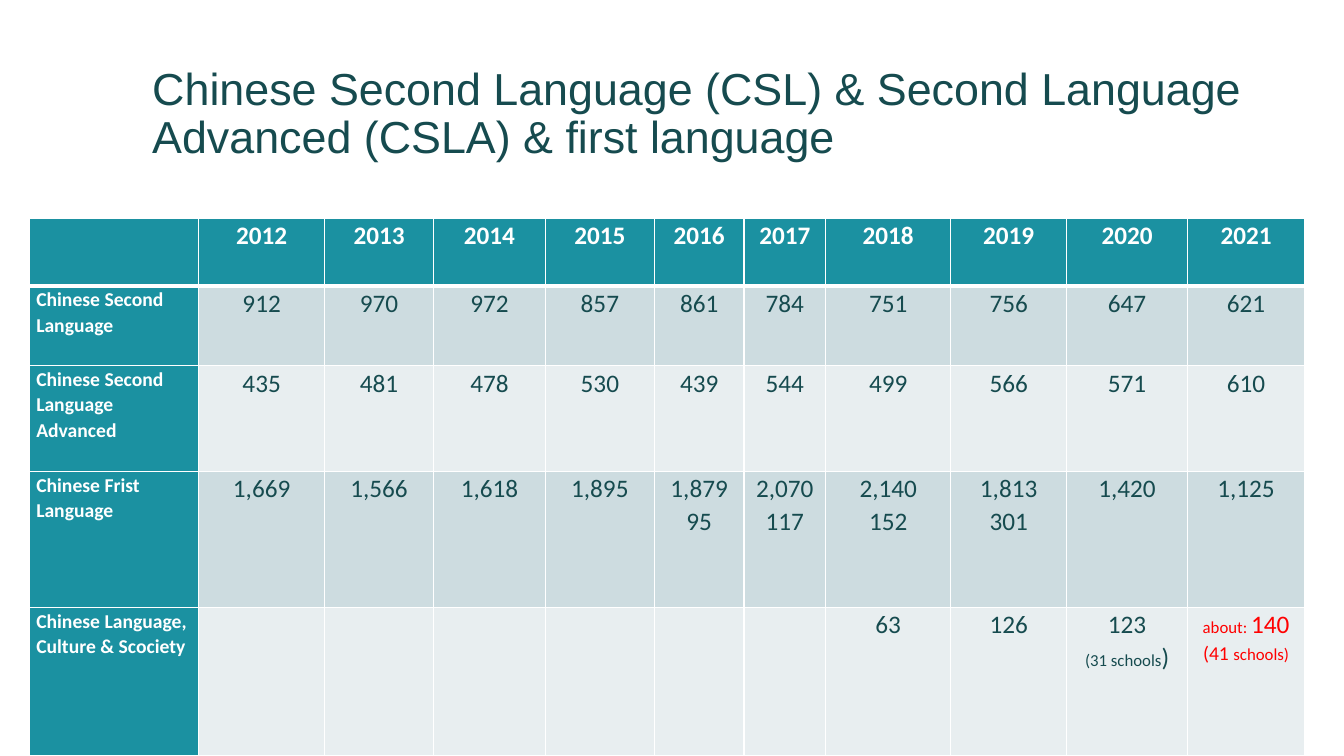
from dataclasses import dataclass

from lxml import etree
from pptx import Presentation
from pptx.dml.color import RGBColor
from pptx.enum.text import MSO_ANCHOR, MSO_AUTO_SIZE, PP_ALIGN
from pptx.oxml.ns import qn
from pptx.util import Inches, Pt

LEFT, CENTER = PP_ALIGN.LEFT, PP_ALIGN.CENTER
BOTTOM = MSO_ANCHOR.BOTTOM
NO_FIT = MSO_AUTO_SIZE.NONE
TITLE_ONLY = 5


@dataclass(frozen=True)
class Theme:
    head: str = "Arial"
    body: str = "Calibri"
    ink: str = "164B4F"
    teal: str = "1B91A1"
    dark: str = "CDDCE0"
    light: str = "E8EEF0"
    white: str = "FFFFFF"
    red: str = "FF0000"
    title: int = 32
    value: int = 18
    label: int = 14
    note: int = 12


THEME = Theme()


@dataclass(frozen=True)
class Part:
    text: str
    size: int


@dataclass(frozen=True)
class Entry:
    lines: tuple
    color: str = THEME.ink


@dataclass(frozen=True)
class Row:
    label: str
    height: float
    values: tuple


TITLE = "Chinese Second Language (CSL) & Second Language Advanced (CSLA) & first language"
WIDTHS = (1.68, 1.25, 1.08, 1.11, 1.08, 0.89, 0.81, 1.24, 1.15, 1.2, 1.16)
VALUE, LABEL, NOTE = THEME.value, THEME.label, THEME.note
SCHOOLS_20 = Entry((
    (Part("123", VALUE),),
    (Part("(31 schools", NOTE), Part(")", VALUE)),
))
SCHOOLS_21 = Entry((
    (Part("about: ", NOTE), Part("140", VALUE)),
    (Part("(41 ", LABEL), Part("schools)", NOTE)),
), THEME.red)
ROWS = (
    Row("", 0.67, tuple(str(year) for year in range(2012, 2022))),
    Row("Chinese Second Language", 0.79,
        ("912", "970", "972", "857", "861", "784", "751", "756", "647", "621")),
    Row("Chinese Second Language Advanced", 1.05,
        ("435", "481", "478", "530", "439", "544", "499", "566", "571", "610")),
    Row("Chinese Frist Language", 1.35,
        ("1,669", "1,566", "1,618", "1,895", "1,879\n95", "2,070\n117",
         "2,140\n152", "1,813\n301", "1,420", "1,125")),
    Row("Chinese Language, Culture & Scociety", 1.47,
        ("",) * 6 + ("63", "126", SCHOOLS_20, SCHOOLS_21)),
)


def write(frame, text, *, size: int, color: str, font: str = THEME.body,
          bold: bool = False, align=CENTER, space: float = 1.07) -> None:
    if isinstance(text, Entry):
        lines, color = text.lines, text.color
    else:
        lines = [(Part(line, size),) for line in text.split("\n")]
    for i, line in enumerate(lines):
        para = frame.add_paragraph() if i else frame.paragraphs[0]
        para.alignment, para.line_spacing = align, space
        para.font.size = Pt(size)
        for part in line:
            if not part.text:
                continue
            run = para.add_run()
            run.text = part.text
            run.font.name, run.font.size, run.font.bold = font, Pt(part.size), bold
            run.font.color.rgb = RGBColor.from_string(color)


def edge(cell, top: int, bottom: int) -> None:
    props = cell._tc.get_or_add_tcPr()
    for i, (side, width) in enumerate((("L", 1), ("R", 1), ("T", top), ("B", bottom))):
        line = etree.Element(qn(f"a:ln{side}"), w=str(Pt(width)))
        fill = etree.SubElement(line, qn("a:solidFill"))
        etree.SubElement(fill, qn("a:srgbClr"), val=THEME.white)
        props.insert(i, line)


def add_title(slide) -> None:
    title = slide.shapes.title
    title.left, title.top = Inches(1.41), Inches(0.42)
    title.width, title.height = Inches(11.23), Inches(1.25)
    frame = title.text_frame
    frame.word_wrap, frame.auto_size, frame.vertical_anchor = True, NO_FIT, BOTTOM
    write(frame, TITLE, size=THEME.title, color=THEME.ink, font=THEME.head,
          align=LEFT, space=0.9)


def add_grid(slide) -> None:
    total = sum(row.height for row in ROWS)
    table = slide.shapes.add_table(
        len(ROWS), len(WIDTHS), Inches(0.29), Inches(2.17),
        Inches(sum(WIDTHS)), Inches(total)).table
    table.horz_banding = False
    for col, width in zip(table.columns, WIDTHS):
        col.width = Inches(width)
    for r, row in enumerate(ROWS):
        table.rows[r].height = Inches(row.height)
        band = THEME.dark if r % 2 else THEME.light
        for c, text in enumerate((row.label, *row.values)):
            cell = table.cell(r, c)
            key = r == 0 or c == 0
            cell.margin_left = cell.margin_right = Inches(0.07)
            cell.margin_top = cell.margin_bottom = 0
            cell.fill.solid()
            cell.fill.fore_color.rgb = RGBColor.from_string(THEME.teal if key else band)
            edge(cell, 3 if r == 1 else 1, 3 if r == 0 else 1)
            write(cell.text_frame, text, size=VALUE if c else LABEL, bold=key,
                  color=THEME.white if key else THEME.ink, align=CENTER if c else LEFT)


def main() -> None:
    deck = Presentation()
    deck.slide_width, deck.slide_height = Inches(13.33), Inches(7.5)
    slide = deck.slides.add_slide(deck.slide_layouts[TITLE_ONLY])
    add_title(slide)
    add_grid(slide)
    deck.save("out.pptx")


if __name__ == "__main__":
    main()
